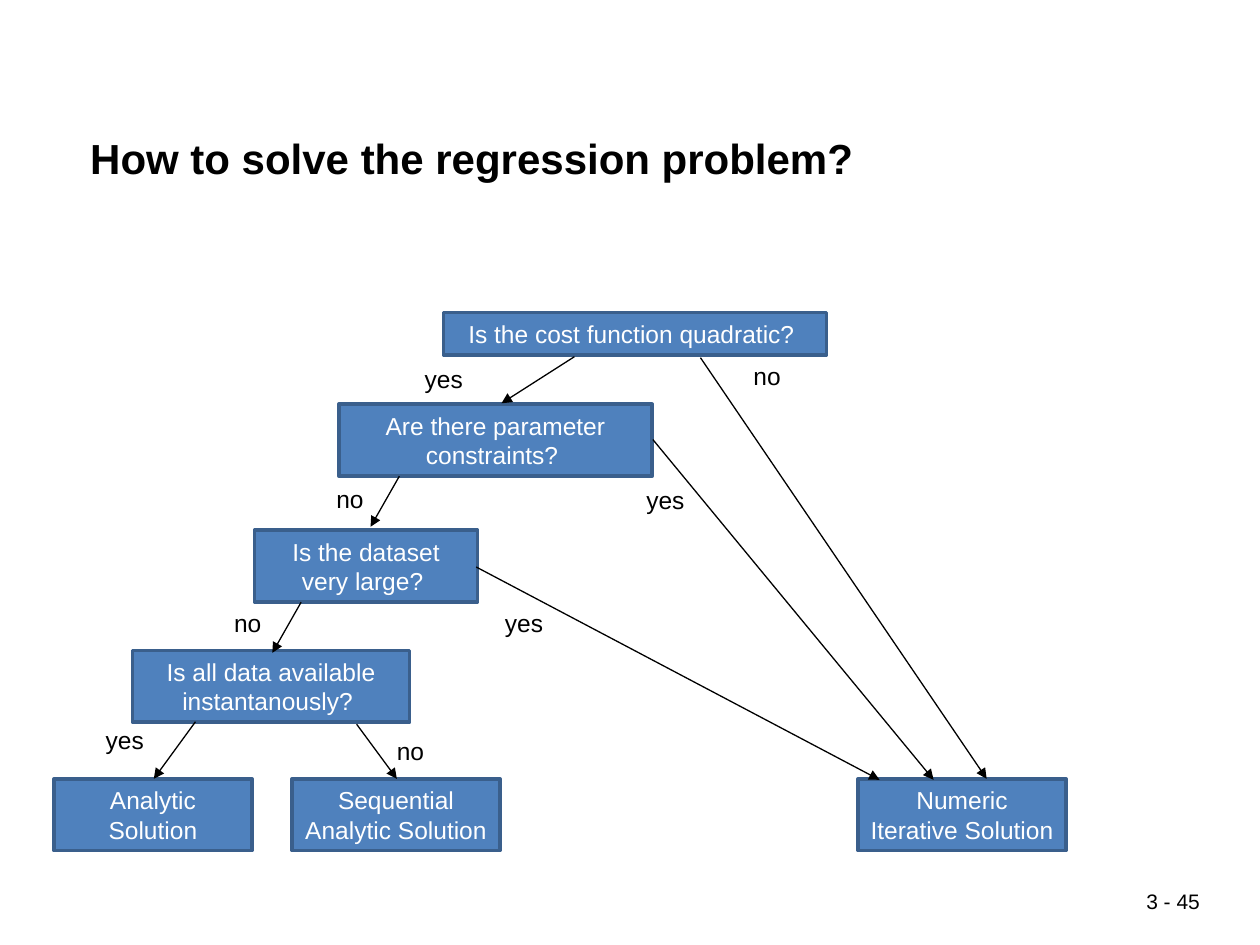
from lxml import etree
from pptx import Presentation
from pptx.dml.color import RGBColor
from pptx.enum import shapes, text
from pptx.oxml import ns
from pptx.util import Cm, Pt

BLACK = RGBColor(0x00, 0x00, 0x00)
WHITE = RGBColor(0xFF, 0xFF, 0xFF)
BOX_FILL = RGBColor(0x4F, 0x81, 0xBD)
BOX_EDGE = RGBColor(0x3A, 0x5F, 0x8C)

STEP_HEIGHT = 1.45
SOLUTION_TOP = 15.7
STEPS = [
    ("Is the cost function quadratic? ", 8.94, 6.3, 7.72, 0.86),
    ("Are there parameter constraints? ", 6.83, 8.15, 6.32, STEP_HEIGHT),
    ("Is the dataset very large? ", 5.13, 10.69, 4.5, STEP_HEIGHT),
    ("Is all data available instantanously? ", 2.67, 13.11, 5.59, STEP_HEIGHT),
    ("Analytic Solution", 1.09, SOLUTION_TOP, 3.99, STEP_HEIGHT),
    ("Sequential Analytic Solution", 5.89, SOLUTION_TOP, 4.19, STEP_HEIGHT),
    ("Numeric Iterative Solution", 17.3, SOLUTION_TOP, 4.19, STEP_HEIGHT),
]
BRANCHES = [
    ("yes", (8.31, 7.21), (11.58, 7.19), (10.11, 8.13)),
    ("no", (14.94, 7.16), (14.12, 7.21), (19.89, 15.7)),
    ("no", (6.53, 9.63), (8.05, 9.6), (7.47, 10.62)),
    ("yes", (12.78, 9.65), (13.16, 8.86), (18.82, 15.72)),
    ("no", (4.47, 12.14), (6.07, 12.14), (5.49, 13.16)),
    ("yes", (9.93, 12.14), (9.6, 11.43), (17.73, 15.72)),
    ("yes", (1.88, 14.5), (3.94, 14.55), (3.1, 15.7)),
    ("no", (7.75, 14.71), (7.19, 14.6), (8.0, 15.7)),
]


def write(frame, wording, size, color, align, bold=False):
    frame.word_wrap = True
    frame.text = wording
    paragraph = frame.paragraphs[0]
    paragraph.alignment = align
    font = paragraph.runs[0].font
    font.name, font.size, font.bold = "Arial", Pt(size), bold
    font.color.rgb = color


def add_label(slide, wording, left, top, width=4.14, height=0.86, size=14,
              align=text.PP_ALIGN.LEFT, bold=False):
    label = slide.shapes.add_textbox(Cm(left), Cm(top), Cm(width), Cm(height))
    write(label.text_frame, wording, size, BLACK, align, bold)


def add_step(slide, wording, left, top, width, height):
    step = slide.shapes.add_shape(
        shapes.MSO_SHAPE.RECTANGLE, Cm(left), Cm(top), Cm(width), Cm(height))
    step.shadow.inherit = False
    step.fill.solid()
    step.fill.fore_color.rgb = BOX_FILL
    step.line.color.rgb = BOX_EDGE
    step.line.width = Pt(2)
    step.text_frame.vertical_anchor = text.MSO_ANCHOR.MIDDLE
    write(step.text_frame, wording, 14, WHITE, text.PP_ALIGN.CENTER)


def add_arrow(slide, start, end):
    arrow = slide.shapes.add_connector(
        shapes.MSO_CONNECTOR.STRAIGHT, *map(Cm, start + end))
    arrow.line.color.rgb = BLACK
    arrow.line.width = Pt(0.75)
    etree.SubElement(arrow.line._get_or_add_ln(), ns.qn("a:tailEnd"), type="triangle")
    etree.SubElement(arrow._element.spPr, ns.qn("a:effectLst"))


def main():
    deck = Presentation()
    deck.slide_width, deck.slide_height = Cm(25.4), Cm(19.05)
    slide = deck.slides.add_slide(deck.slide_layouts[6])
    add_label(slide, "How to solve the regression problem?",
              1.57, 2.54, 22.4, 1.7, size=24, bold=True)
    for step in STEPS:
        add_step(slide, *step)
    for answer, place, start, end in BRANCHES:
        add_arrow(slide, start, end)
        add_label(slide, answer, *place)
    add_label(slide, "3 - 45", 21.49, 17.78, 2.95, 0.84, size=12,
              align=text.PP_ALIGN.RIGHT)
    deck.save("out.pptx")


if __name__ == "__main__":
    main()
